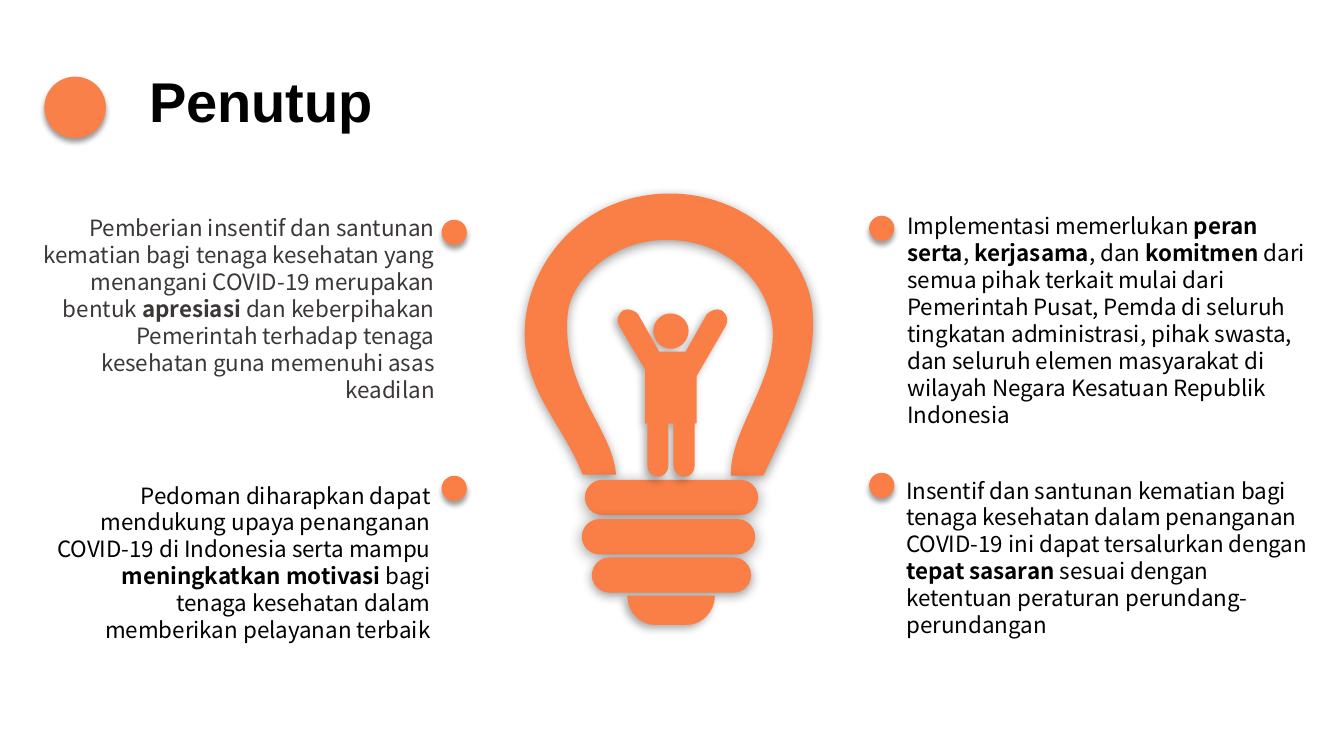
import pptx
import pptx.util
import pptx.dml.color
import pptx.enum.shapes
import pptx.enum.text
import pptx.oxml
import pptx.oxml.ns

SCALE = 9144
COLOURS = {"orange": "F97F47", "title_dot": "F98048", "black": "000000", "grey": "3B3737"}
BODY_FONT = "Noto Sans CJK SC"
DOT_SHADOW = (40, 4, 3, 90)
BASE_SHADOW = (40, 11, 2, 90)
BULB_SHADOW = (40, 8, 2, 90)
FIGURE_SHADOW = (32, 6, 3, 135)
RIGHT = pptx.enum.text.PP_ALIGN.RIGHT
LEFT = pptx.enum.text.PP_ALIGN.LEFT
ELLIPSE = pptx.enum.shapes.MSO_SHAPE.OVAL
ROUNDED = pptx.enum.shapes.MSO_SHAPE.ROUNDED_RECTANGLE

BULB = [[
    (611, 471), (578, 471), (557, 417, 515, 385, 521, 318), (527, 261, 575, 194, 662, 192),
    (750, 191, 804, 262, 806, 310), (810, 366, 784, 415, 757, 472), (725, 472),
    (723, 424, 779, 368, 764, 312), (753, 269, 711, 237, 659, 238),
    (606, 239, 566, 278, 563, 312), (557, 387, 607, 423, 611, 471),
]]
BULB_TIP = [[
    (622, 591), (709, 591), (709, 607, 696, 620, 681, 620), (650, 620),
    (637, 620, 625, 610, 623, 597), (622, 591),
]]
FIGURE = [
    [
        (665, 311), (675, 311, 683, 319, 683, 328), (683, 338, 675, 346, 665, 346),
        (656, 346, 648, 338, 648, 328), (648, 319, 656, 311, 665, 311),
    ],
    [
        (712, 307), (716, 308), (719, 311), (722, 315, 722, 319, 720, 323), (691, 373),
        (691, 420), (689, 420), (689, 462), (689, 468, 685, 473, 679, 473),
        (673, 473, 668, 468, 668, 462), (668, 420), (663, 420), (663, 462),
        (663, 468, 658, 473, 653, 473), (647, 473, 642, 468, 642, 462), (642, 420),
        (640, 420), (640, 367), (614, 323), (612, 319, 612, 315, 615, 311), (618, 308),
        (622, 307), (626, 307, 631, 309, 633, 312), (654, 349), (680, 349), (701, 312),
        (704, 309, 708, 307, 712, 307),
    ],
]


def px(length):
    return pptx.util.Emu(round(length * SCALE))


def colour(name):
    return pptx.dml.color.RGBColor.from_string(COLOURS[name])


def style_shape(shape, fill, shadow):
    shape.fill.solid()
    shape.fill.fore_color.rgb = colour(fill)
    shape.line.fill.background()
    shape.shadow.inherit = False
    alpha, blur, distance, direction = shadow
    effects = shape._element.spPr.find(pptx.oxml.ns.qn("a:effectLst"))
    effects.append(pptx.oxml.parse_xml(
        f'<a:outerShdw {pptx.oxml.ns.nsdecls("a")} blurRad="{blur * 12700}" '
        f'dist="{distance * 12700}" dir="{direction * 60000}" algn="ctr" rotWithShape="0">'
        f'<a:srgbClr val="{COLOURS["black"]}"><a:alpha val="{alpha * 1000}"/></a:srgbClr>'
        '</a:outerShdw>'))


def add_preset(slide, kind, box, shadow, fill="orange"):
    shape = slide.shapes.add_shape(kind, *map(px, box))
    if kind == ROUNDED:
        shape.adjustments[0] = 0.5
    style_shape(shape, fill, shadow)


def curve_element(segment, left, top):
    points = "".join(
        f'<a:pt x="{px(x) - left}" y="{px(y) - top}"/>'
        for x, y in zip(segment[::2], segment[1::2]))
    return pptx.oxml.parse_xml(
        f'<a:cubicBezTo {pptx.oxml.ns.nsdecls("a")}>{points}</a:cubicBezTo>')


def add_outline(slide, contours, shadow):
    builder = slide.shapes.build_freeform(*map(px, contours[0][0]))
    for index, contour in enumerate(contours):
        if index:
            builder.move_to(*map(px, contour[0]))
        ends = [tuple(map(px, segment[-2:])) for segment in contour[1:]]
        builder.add_line_segments(ends, close=True)
    shape = builder.convert_to_shape()
    segments = [segment for contour in contours for segment in contour[1:]]
    lines = list(shape._element.iter(pptx.oxml.ns.qn("a:lnTo")))
    for line, segment in zip(lines, segments):
        if len(segment) == 6:
            line.getparent().replace(line, curve_element(segment, shape.left, shape.top))
    style_shape(shape, "orange", shadow)


def add_text(slide, box, runs, *, size=16, font=BODY_FONT, ink="black", align=LEFT, bold_from=1):
    frame = slide.shapes.add_textbox(*map(px, box)).text_frame
    frame.word_wrap = True
    frame.auto_size = pptx.enum.text.MSO_AUTO_SIZE.SHAPE_TO_FIT_TEXT
    paragraph = frame.paragraphs[0]
    paragraph.alignment = align
    for index, text in enumerate(runs):
        run = paragraph.add_run()
        run.text = text
        run.font.name = font
        run.font.size = pptx.util.Pt(size)
        run.font.bold = index % 2 == bold_from
        run.font.color.rgb = colour(ink)


def main():
    presentation = pptx.Presentation()
    presentation.slide_width = px(1333)
    presentation.slide_height = px(750)
    slide = presentation.slides.add_slide(presentation.slide_layouts[6])

    add_outline(slide, BULB, BULB_SHADOW)
    for left, top, width, shadow in (
        (580, 476, 172, BASE_SHADOW), (577, 515, 172, BASE_SHADOW), (587, 553, 158, BULB_SHADOW),
    ):
        add_preset(slide, ROUNDED, (left, top, width, 35), shadow)
    add_outline(slide, BULB_TIP, FIGURE_SHADOW)
    add_outline(slide, FIGURE, FIGURE_SHADOW)

    add_text(slide, (890, 206, 418, 195), (
        "Implementasi memerlukan ", "peran serta", ", ", "kerjasama", ", dan ", "komitmen ",
        "dari semua pihak terkait mulai dari Pemerintah Pusat, Pemda di seluruh tingkatan "
        "administrasi, pihak swasta, dan seluruh elemen masyarakat di wilayah Negara Kesatuan "
        "Republik Indonesia"))
    add_text(slide, (889, 468, 418, 142), (
        "Insentif dan santunan kematian bagi tenaga kesehatan dalam penanganan COVID-19 ini "
        "dapat tersalurkan dengan ", "tepat sasaran ",
        "sesuai dengan ketentuan peraturan perundang-perundangan"))
    add_text(slide, (23, 208, 418, 168), (
        "Pemberian insentif dan santunan kematian bagi tenaga kesehatan yang menangani COVID-19 "
        "merupakan bentuk ", "apresiasi",
        " dan keberpihakan Pemerintah terhadap tenaga kesehatan guna memenuhi asas keadilan"),
        ink="grey", align=RIGHT)
    add_text(slide, (44, 473, 393, 168), (
        "Pedoman diharapkan dapat mendukung upaya penanganan COVID-19 di Indonesia serta mampu ",
        "meningkatkan motivasi ", "bagi tenaga kesehatan dalam memberikan pelayanan terbaik"),
        align=RIGHT)

    for left, top in ((438, 218), (438, 472), (862, 214), (862, 469)):
        add_preset(slide, ELLIPSE, (left, top, 25, 25), DOT_SHADOW)

    add_preset(slide, ELLIPSE, (44, 76, 61, 61), DOT_SHADOW, fill="title_dot")
    add_text(slide, (138, 61, 413, 77), ("Penutup",), size=40, font="Arial", bold_from=0)
    presentation.save("out.pptx")


if __name__ == "__main__":
    main()
